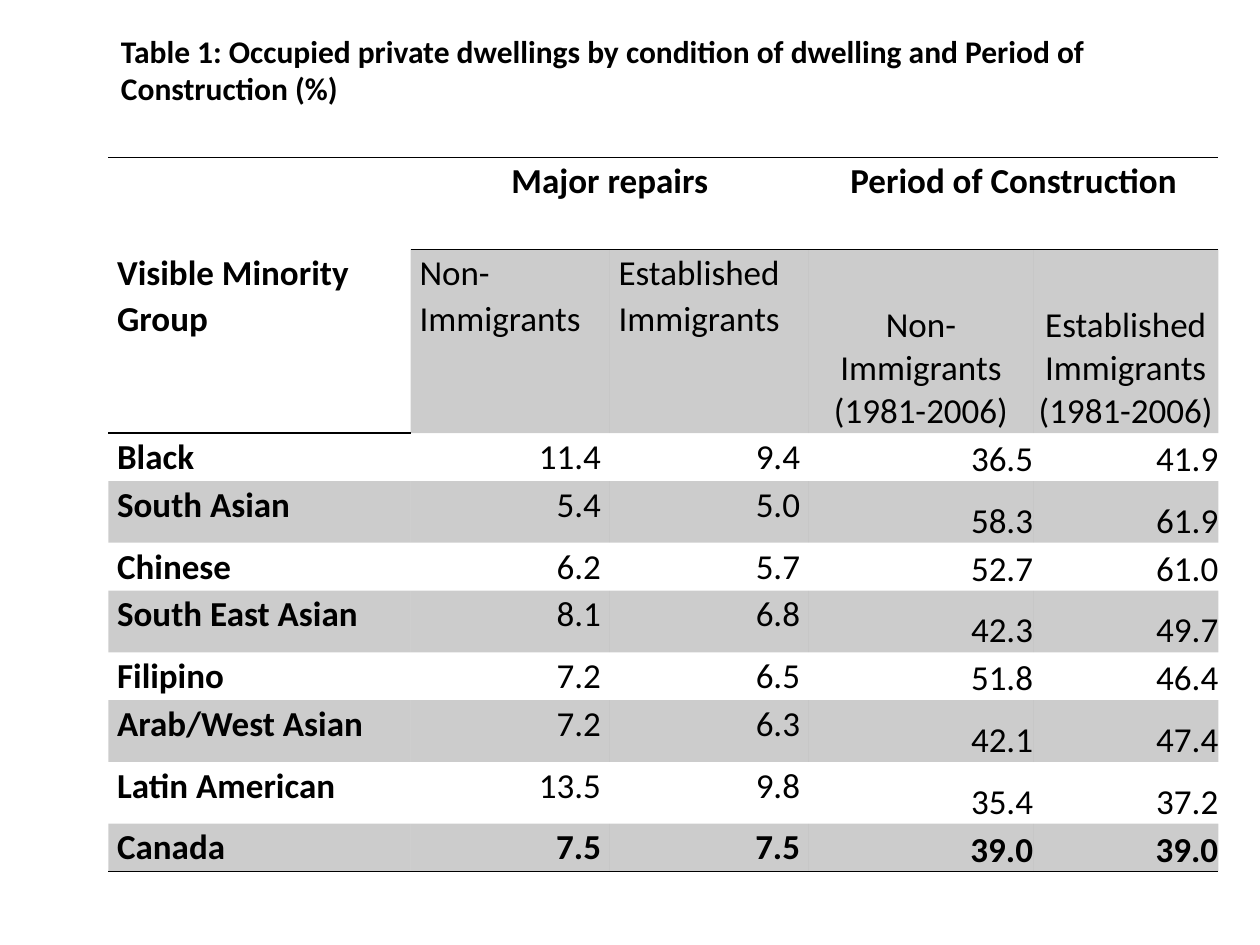
from lxml import etree
from pptx import Presentation
from pptx.dml.color import RGBColor
from pptx.enum.text import MSO_ANCHOR, MSO_AUTO_SIZE, PP_ALIGN
from pptx.oxml import parse_xml
from pptx.oxml.ns import nsdecls, qn
from pptx.util import Inches, Pt

COLORS = {"ink": "000000"}
NO_STYLE_NO_GRID = "{2D5ABB26-0587-4C30-8999-92F81FD0307C}"
LEFT, CENTER, RIGHT = PP_ALIGN.LEFT, PP_ALIGN.CENTER, PP_ALIGN.RIGHT

COL_WIDTHS = [2.4, 1.58, 1.58, 1.78, 1.47]
ROW_HEIGHTS = [0.73, 1.44, 0.38, 0.49, 0.38, 0.49, 0.38, 0.49, 0.49, 0.38]
SUBHEADS = ["Non-Immigrants", "Established Immigrants"]
GROUPS = [
    ("Black", "11.4", "9.4", "36.5", "41.9"),
    ("South Asian", "5.4", "5.0", "58.3", "61.9"),
    ("Chinese", "6.2", "5.7", "52.7", "61.0"),
    ("South East Asian", "8.1", "6.8", "42.3", "49.7"),
    ("Filipino", "7.2", "6.5", "51.8", "46.4"),
    ("Arab/West Asian", "7.2", "6.3", "42.1", "47.4"),
    ("Latin American", "13.5", "9.8", "35.4", "37.2"),
    ("Canada", "7.5", "7.5", "39.0", "39.0"),
]


def write(tf, text, size=20, bold=False, align=LEFT, spacing=1.07):
    """Fill a text frame, one paragraph for each line of text."""
    for i, line in enumerate(text.split("\n")):
        p = tf.paragraphs[0] if i == 0 else tf.add_paragraph()
        p.alignment = align
        p.line_spacing = spacing
        r = p.add_run()
        r.text = line
        r.font.name = "Calibri"
        r.font.size = Pt(size)
        r.font.bold = bold
        r.font.color.rgb = RGBColor.from_string(COLORS["ink"])


def add_rules(cell, *sides):
    """Draw 1 pt lines on the given sides, "T" before "B"."""
    for i, side in enumerate(sides):
        cell._tc.get_or_add_tcPr().insert(i, parse_xml(
            f'<a:ln{side} {nsdecls("a")} w="12700"><a:solidFill>'
            f'<a:srgbClr val="{COLORS["ink"]}"/></a:solidFill></a:ln{side}>'))


prs = Presentation()
prs.slide_width, prs.slide_height = Inches(10), Inches(7.5)
s = prs.slides.add_slide(prs.slide_layouts[5])

title = s.shapes.title
title.left, title.top = Inches(0.86), Inches(0.2)
title.width, title.height = Inches(8.64), Inches(0.71)
tf = title.text_frame
tf.word_wrap = True
tf.auto_size = MSO_AUTO_SIZE.NONE
tf.vertical_anchor = MSO_ANCHOR.TOP
write(tf, "Table 1: Occupied private dwellings by condition of dwelling "
          "and Period of Construction (%)", size=18, bold=True, spacing=1.0)

frame = s.shapes.add_table(len(ROW_HEIGHTS), len(COL_WIDTHS), Inches(0.86), Inches(1.25),
                           Inches(sum(COL_WIDTHS)), Inches(sum(ROW_HEIGHTS)))
table = frame.table
table.first_row = table.horz_banding = False
table._tbl.tblPr.find(qn("a:tableStyleId")).text = NO_STYLE_NO_GRID
for column, width in zip(table.columns, COL_WIDTHS):
    column.width = Inches(width)
for row, height in zip(table.rows, ROW_HEIGHTS):
    row.height = Inches(height)

# Cell margins, banding and rules
last = len(ROW_HEIGHTS) - 1
for r_no, row in enumerate(table.rows):
    for c_no, cell in enumerate(row.cells):
        period = c_no > 2 and r_no > 0
        cell.margin_left = cell.margin_right = Inches(0 if period else 0.07)
        cell.margin_top = cell.margin_bottom = 0
        cell.vertical_anchor = MSO_ANCHOR.BOTTOM if period else MSO_ANCHOR.TOP
        if r_no % 2 and (r_no, c_no) != (1, 0):
            cell.fill.solid()
            cell.fill.fore_color.rgb = RGBColor.from_string(COLORS["ink"])
            color = cell._tc.tcPr.find(f".//{qn('a:srgbClr')}")
            etree.SubElement(color, qn("a:alpha")).set("val", "20000")
        else:
            cell.fill.background()
        if r_no == 0:
            add_rules(cell, "T", "B")
        elif r_no == last or (r_no, c_no) == (1, 0):
            add_rules(cell, "B")

# Header rows
group_head = table.cell(0, 0)
group_head.merge(table.cell(1, 0))
group_head.margin_top = Inches(0.73)
write(group_head.text_frame, "Visible Minority Group", bold=True)
for c_no, text in ((1, "Major repairs"), (3, "Period of Construction")):
    table.cell(0, c_no).merge(table.cell(0, c_no + 1))
    write(table.cell(0, c_no).text_frame, text, bold=True, align=CENTER)
for i, text in enumerate(SUBHEADS):
    write(table.cell(1, 1 + i).text_frame, text)
    write(table.cell(1, 3 + i).text_frame, f"{text}\n(1981-2006)", align=CENTER, spacing=1.0)

# Body rows
for r_no, values in enumerate(GROUPS, start=2):
    for c_no, text in enumerate(values):
        write(table.cell(r_no, c_no).text_frame, text,
              bold=c_no == 0 or r_no == last,
              align=RIGHT if c_no else LEFT,
              spacing=1.0 if c_no > 2 else 1.07)

prs.save("out.pptx")
